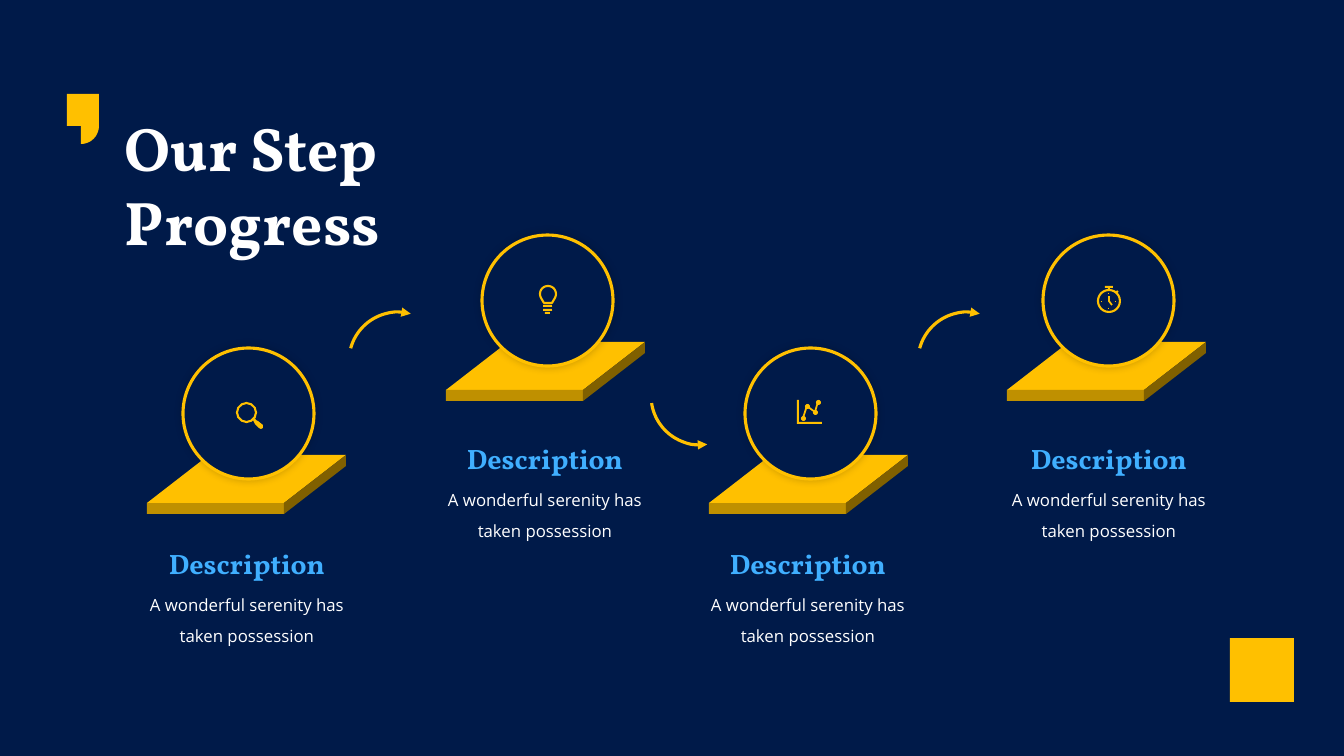
from math import cos, radians, sin

from lxml import etree
from pptx import Presentation
from pptx import util as u
from pptx.dml.color import RGBColor
from pptx.enum import shapes as kinds, text
from pptx.oxml.ns import qn

PX = 12192000 / 1344
NAVY, GOLD, DARK_GOLD, BROWN = "001A49", "FFC000", "BF9000", "806000"
WHITE, BLUE = "FFFFFF", "40AFFF"
KIND = kinds.MSO_SHAPE
color = RGBColor.from_string


def draw(shapes, kind, numbers, fill=None, width=0):
    if kind in ("polygon", "polyline"):
        points = [(round(x * PX), round(y * PX)) for x, y in numbers]
        builder = shapes.build_freeform(*points[0])
        builder.add_line_segments(points[1:], close=kind == "polygon")
        shape = builder.convert_to_shape()
    else:
        shape = shapes.add_shape(kind, *[round(n * PX) for n in numbers])
    shape.shadow.inherit = False
    if fill:
        shape.fill.solid()
        shape.fill.fore_color.rgb = color(fill)
    else:
        shape.fill.background()
    if width:
        shape.line.color.rgb = color(GOLD)
        shape.line.width = u.Pt(width)
    else:
        shape.line.fill.background()
    return shape


def write(box, content, size, font, ink, bold=False, spacing=None, align=text.PP_ALIGN.CENTER,
          anchor=text.MSO_ANCHOR.TOP):
    frame = slide.shapes.add_textbox(*[round(n * PX) for n in box]).text_frame
    frame.word_wrap = True
    frame.vertical_anchor = anchor
    paragraph = frame.paragraphs[0]
    paragraph.text = content
    paragraph.alignment = align
    if spacing:
        paragraph.line_spacing = spacing
    paragraph.font.size = u.Pt(size)
    paragraph.font.name = font
    paragraph.font.bold = bold
    paragraph.font.color.rgb = color(ink)


presentation = Presentation()
presentation.slide_width = round(1344 * PX)
presentation.slide_height = round(756 * PX)
slide = presentation.slides.add_slide(presentation.slide_layouts[6])
slide.background.fill.solid()
slide.background.fill.fore_color.rgb = color(NAVY)

write((115, 87, 407, 193), "Our Step Progress", 44, "Vollkorn", WHITE, bold=True,
      align=text.PP_ALIGN.LEFT, anchor=text.MSO_ANCHOR.MIDDLE)
quote_curve = [(81 + 18 * cos(radians(a)), 126 + 18 * sin(radians(a))) for a in range(90, -1, -6)]
draw(slide.shapes, "polygon", [(67, 94), (67, 126), (81, 126), *quote_curve, (99, 94)], GOLD)

steps = [(147, 348, 247, 542), (446, 235, 545, 437), (709, 348, 808, 542), (1007, 235, 1109, 437)]
for left, top, center, text_top in steps:
    platform = slide.shapes.add_group_shape().shapes
    right, inner, back, front = left + 199, left + 137, top + 107, top + 155
    draw(platform, "polygon", [(inner, front), (left, front), (left + 62, back), (right, back)], GOLD)
    draw(platform, KIND.RECTANGLE, (left, front, 137, 11), DARK_GOLD)
    draw(platform, "polygon", [(right, back), (right, back + 11), (inner, front + 11), (inner, front)], BROWN)

    circle = draw(slide.shapes, KIND.OVAL, (left + 36, top, 131, 131), NAVY, 2.25)
    effects = circle._element.spPr.find(qn("a:effectLst"))
    shadow = etree.SubElement(effects, qn("a:outerShdw"), blurRad=str(u.Pt(6)), dist="0", dir="18900000")
    shade = etree.SubElement(shadow, qn("a:srgbClr"), val="000000")
    etree.SubElement(shade, qn("a:alpha"), val="20000")

    write((center - 105, text_top, 210, 44), "Description", 20, "Vollkorn", BLUE, bold=True)
    write((center - 114, text_top + 38, 228, 68), "A wonderful serenity has taken possession",
          12, "Open Sans", WHITE, spacing=1.5)

for left, top, rotation, flipped in [(349, 312, 285.1, False), (918, 312, 285.1, False), (651, 347, 261.6, True)]:
    arrow = draw(slide.shapes, KIND.ARC, (left, top, 98, 98), width=2.25)
    arrow.rotation = rotation
    if flipped:
        arrow._element.spPr.find(qn("a:xfrm")).set("flipH", "1")
    etree.SubElement(arrow.line._get_or_add_ln(), qn("a:tailEnd"), type="triangle")

magnifier = slide.shapes.add_group_shape().shapes
draw(magnifier, KIND.OVAL, (237, 403, 19, 19), width=1.5)
draw(magnifier, "polygon", [(255, 418), (256, 420), (258, 421), (263, 425), (263, 428), (261, 429),
                            (259, 428), (255, 424), (254, 422), (253, 420)], GOLD)

bulb = slide.shapes.add_group_shape().shapes
glass = [(548 + 8 * cos(radians(a)), 294 + 8 * sin(radians(a))) for a in range(150, 391, 10)]
draw(bulb, "polygon", [(544, 303), *glass, (552, 303)], width=1.5)
for left, top, width in [(543, 305, 9), (543, 309, 9), (545, 312, 5)]:
    draw(bulb, KIND.ROUNDED_RECTANGLE, (left, top, width, 2), GOLD)

graph = slide.shapes.add_group_shape().shapes
draw(graph, "polygon", [(797, 400), (799, 400), (799, 422), (822, 422), (822, 424), (797, 424)], GOLD)
nodes = [(803, 418), (807, 406), (815, 412), (818, 402)]
draw(graph, "polyline", nodes, width=1.25)
for x, y in nodes:
    draw(graph, KIND.OVAL, (x - 2, y - 2, 5, 5), GOLD)

stopwatch = slide.shapes.add_group_shape().shapes
draw(stopwatch, KIND.OVAL, (1098, 290, 22, 22), width=1.5)
draw(stopwatch, KIND.RECTANGLE, (1105, 286, 8, 2), GOLD)
draw(stopwatch, KIND.RECTANGLE, (1108, 288, 2, 2), GOLD)
draw(stopwatch, "polyline", [(1116, 293), (1118, 291)], width=1.5)
draw(stopwatch, "polyline", [(1109, 296), (1109, 301), (1112, 305)], width=1.25)
for x, y in [(1108, 293), (1108, 308), (1115, 301), (1101, 301)]:
    draw(stopwatch, KIND.OVAL, (x, y, 1, 1), GOLD)

draw(slide.shapes, KIND.RECTANGLE, (1230, 638, 64, 64), GOLD)
presentation.save("out.pptx")
